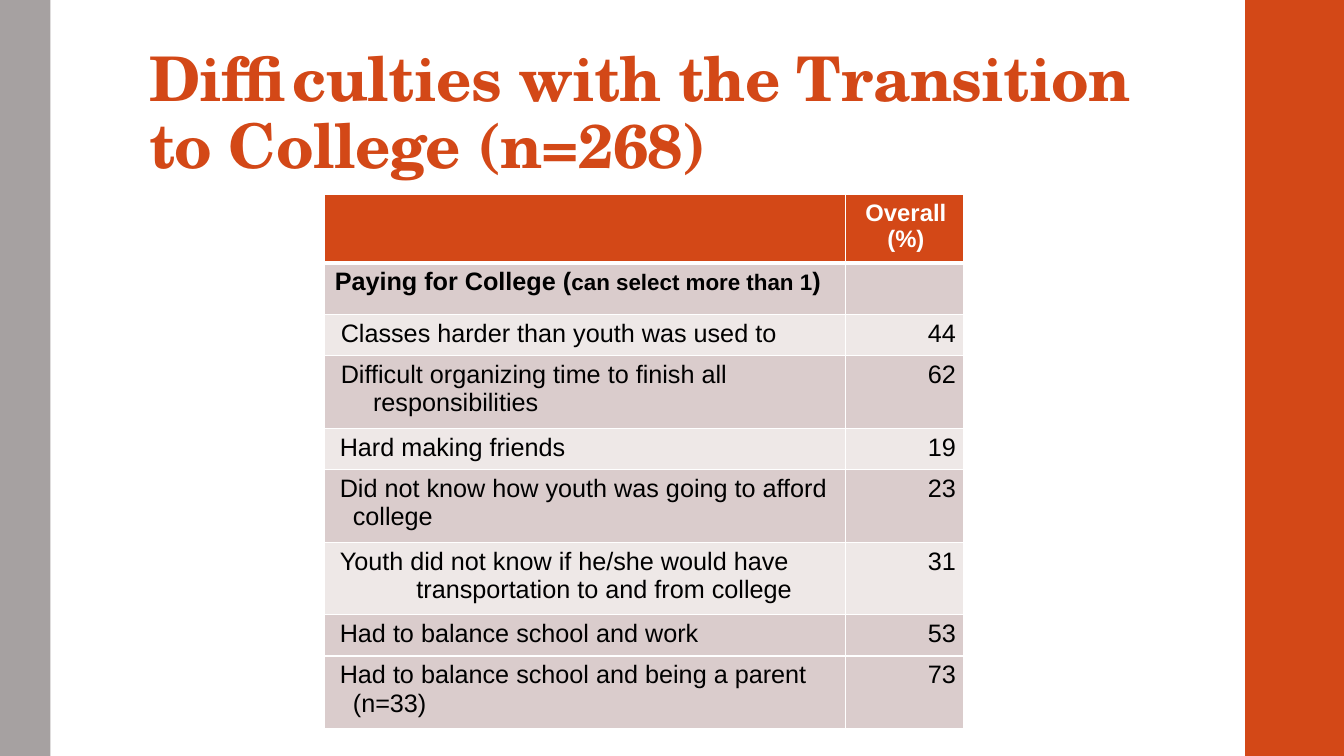
from lxml import etree
from pptx import Presentation
from pptx.dml.color import RGBColor
from pptx.enum import shapes, text
from pptx.oxml.ns import qn
from pptx.util import Inches, Pt

COLORS = {"orange": "D34817", "gray": "A6A1A1", "white": "FFFFFF",
          "black": "000000", "rose": "DACCCC", "pale": "EEE8E7"}
TITLE = "Difficulties with the Transition to College (n=268)"
HEADER = "Overall (%)"
SECTION = [("Paying for College (", 18), ("can select more than 1", 16), (")", 18)]
DIFFICULTIES = [
    ("Classes harder than youth was used to", 44, "pale", 0.06, 0),
    ("Difficult organizing time to finish all responsibilities", 62, "rose", 0.38, -0.32),
    ("Hard making friends", 19, "pale", 0.18, -0.13),
    ("Did not know how youth was going to afford college", 23, "rose", 0.18, -0.13),
    ("Youth did not know if he/she would have transportation to and from college",
     31, "pale", 0.81, -0.76),
    ("Had to balance school and work", 53, "rose", 0.18, -0.13),
    ("Had to balance school and being a parent (n=33)", 73, "rose", 0.18, -0.13),
]
SIDE_BARS = [(12.35, 1, "orange"), (0, 0.5, "gray")]
COLUMN_WIDTHS = [5.17, 1.19]
ROW_HEIGHTS = [0.68, 0.51, 0.41, 0.72, 0.41, 0.72, 0.72, 0.41, 0.72]


def rgb(name):
    return RGBColor.from_string(COLORS[name])


def write(paragraph, content, size=18, color="black", bold=False, font="Arial",
          align=None, margin=0, indent=0, spacing=0):
    run = paragraph.add_run()
    run.text = content
    run.font.name = font
    run.font.size = Pt(size)
    run.font.bold = bold
    run.font.color.rgb = rgb(color)
    if spacing:
        run._r.get_or_add_rPr().set("spc", str(int(spacing * 100)))
    if align is not None:
        paragraph.alignment = align
    properties = paragraph._p.get_or_add_pPr()
    properties.set("marL", str(Inches(margin)))
    properties.set("indent", str(Inches(indent)))


def format_cell(cell, fill, left=1, right=1, top=1, bottom=1):
    cell.fill.solid()
    cell.fill.fore_color.rgb = rgb(fill)
    properties = cell._tc.get_or_add_tcPr()
    borders = {"lnL": left, "lnR": right, "lnT": top, "lnB": bottom}
    for position, (side, width) in enumerate(borders.items()):
        line = etree.Element(qn(f"a:{side}"), w=str(Pt(width)))
        line_fill = etree.SubElement(line, qn("a:solidFill"))
        etree.SubElement(line_fill, qn("a:srgbClr"), val=COLORS["white"])
        properties.insert(position, line)


def add_side_bars(slide):
    for left, width, color in SIDE_BARS:
        bar = slide.shapes.add_shape(shapes.MSO_SHAPE.RECTANGLE, Inches(left), 0,
                                     Inches(width), Inches(7.5))
        bar.shadow.inherit = False
        bar.fill.solid()
        bar.fill.fore_color.rgb = rgb(color)
        bar.line.fill.background()


def add_title(slide):
    box = slide.shapes.add_textbox(Inches(1.38), Inches(0.32), Inches(10.6), Inches(1.53))
    frame = box.text_frame
    frame.word_wrap = True
    frame.vertical_anchor = text.MSO_ANCHOR.BOTTOM
    frame.margin_top = Inches(0.03)
    frame.margin_bottom = Inches(0.05)
    paragraph = frame.paragraphs[0]
    paragraph.line_spacing = 0.9
    write(paragraph, TITLE, size=44, color="orange", bold=True,
          font="TeX Gyre Schola", spacing=-0.5)


def add_difficulties_table(slide):
    table = slide.shapes.add_table(
        len(ROW_HEIGHTS), len(COLUMN_WIDTHS), Inches(3.22), Inches(1.93),
        Inches(sum(COLUMN_WIDTHS)), Inches(sum(ROW_HEIGHTS))).table
    table.horz_banding = False
    for column, width in zip(table.columns, COLUMN_WIDTHS):
        column.width = Inches(width)
    for row, height in zip(table.rows, ROW_HEIGHTS):
        row.height = Inches(height)

    fills = ["orange", "rose"] + [entry[2] for entry in DIFFICULTIES]
    for row, fill in enumerate(fills):
        for column, right in enumerate([1, 4.5]):
            format_cell(table.cell(row, column), fill, right=right,
                        top=3 if row == 1 else 1, bottom=3 if row == 0 else 1)

    def paragraph_at(row, column):
        return table.cell(row, column).text_frame.paragraphs[0]

    write(paragraph_at(0, 1), HEADER, size=17, color="white", bold=True,
          align=text.PP_ALIGN.CENTER)
    for content, size in SECTION:
        write(paragraph_at(1, 0), content, size=size, bold=True)
    for row, (label, value, _, margin, indent) in enumerate(DIFFICULTIES, start=2):
        write(paragraph_at(row, 0), label, margin=margin, indent=indent)
        write(paragraph_at(row, 1), str(value), align=text.PP_ALIGN.RIGHT)


def main():
    """Build the slide on difficulties with the transition to college."""
    presentation = Presentation()
    presentation.slide_width = Inches(13.33)
    presentation.slide_height = Inches(7.5)
    slide = presentation.slides.add_slide(presentation.slide_layouts[6])
    add_side_bars(slide)
    add_title(slide)
    add_difficulties_table(slide)
    presentation.save("out.pptx")


if __name__ == "__main__":
    main()
